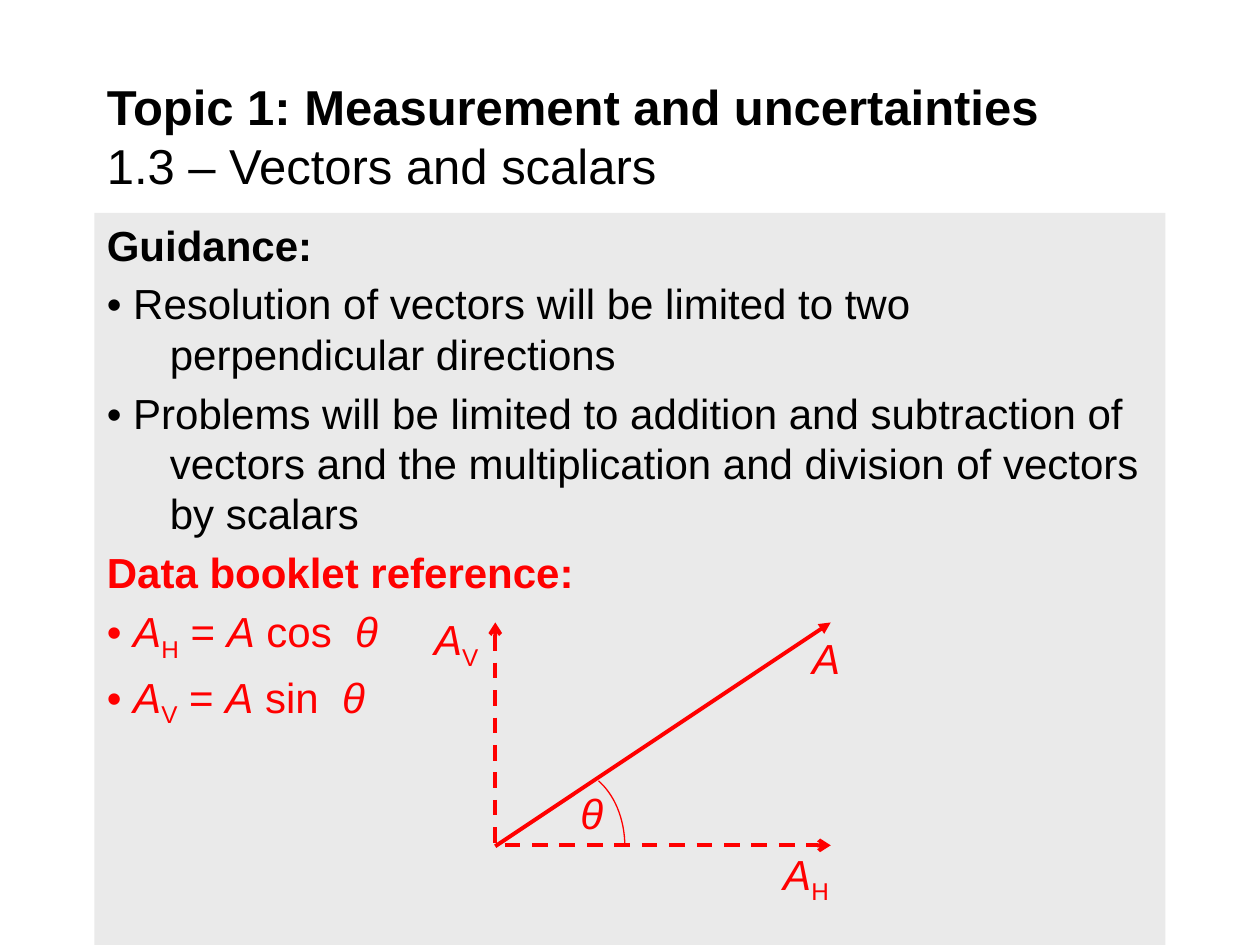
from pptx import Presentation
from pptx.dml.color import RGBColor
from pptx.enum.dml import MSO_LINE_DASH_STYLE as Dash
from pptx.enum.shapes import MSO_CONNECTOR as Link, MSO_SHAPE as Shape
from pptx.enum.text import MSO_ANCHOR as Anchor, MSO_AUTO_SIZE as Fit, PP_ALIGN as Align
from pptx.oxml.ns import qn
from pptx.util import Pt
from lxml.etree import SubElement

BLACK, RED, PANEL = "000000", "FF0000", "EAEAEA"


def colour(value):
    return RGBColor.from_string(value)


def add_span(para, text, style="", tint=BLACK, size=24):
    span = para.add_run()
    span.text = text
    font = span.font
    font.name, font.size = "Arial", Pt(size)
    font.bold, font.italic = style == "bold", style == "italic"
    font.color.rgb = colour(tint)
    if style == "sub":
        font._element.set("baseline", "-25000")


def add_text(shapes, box, wrap=True):
    frame = shapes.add_textbox(*map(Pt, box)).text_frame
    frame.word_wrap = wrap
    return frame


def style_line(shape, width, **ends):
    shape.line.color.rgb = colour(RED)
    shape.line.width = Pt(width)
    for end, kind in ends.items():
        SubElement(shape.line._get_or_add_ln(), qn(f"a:{end}End"), type=kind)


def add_title(page, box):
    frame = add_text(page.shapes, box)
    frame.vertical_anchor = Anchor.MIDDLE
    para = frame.paragraphs[0]
    add_span(para, "Topic 1: Measurement and uncertainties", "bold", size=28)
    para.add_line_break()
    add_span(para, "1.3 – Vectors and scalars", size=28)


def equation(part, function):
    return [("• ", ""), ("A", "italic"), (part, "sub"), (" = ", ""),
            ("A", "italic"), (f" {function}  ", ""), ("θ", "italic")]


def add_guidance(page, box):
    panel = page.shapes.add_shape(Shape.RECTANGLE, *map(Pt, box))
    panel.shadow.inherit = False
    panel.fill.solid()
    panel.fill.fore_color.rgb = colour(PANEL)
    panel.line.fill.background()
    frame = panel.text_frame
    frame.word_wrap = True
    frame.vertical_anchor = Anchor.TOP
    rows = [
        (BLACK, [("Guidance:", "bold")]),
        (BLACK, [("• Resolution of vectors will be limited to two perpendicular directions", "")]),
        (BLACK, [("• Problems will be limited to addition and subtraction of vectors "
                  "and the multiplication and division of vectors by scalars", "")]),
        (RED, [("Data booklet reference:", "bold")]),
        (RED, equation("H", "cos")),
        (RED, equation("V", "sin")),
    ]
    for index, (tint, spans) in enumerate(rows):
        para = frame.add_paragraph() if index else frame.paragraphs[0]
        para.alignment = Align.LEFT
        para.space_before = Pt(4.8)
        props = para._p.get_or_add_pPr()
        props.set("marL", str(Pt(36)))
        props.set("indent", str(-Pt(36)))
        for text, style in spans:
            add_span(para, text, style, tint)


def add_diagram(page, box):
    left, top, width, height = box
    right, bottom = left + width, top + height
    shapes = page.shapes.add_group_shape().shapes

    builder = shapes.build_freeform(Pt(left), Pt(top))
    builder.add_line_segments([(Pt(left), Pt(bottom)), (Pt(right), Pt(bottom))], close=False)
    axes = builder.convert_to_shape()
    axes.shadow.inherit = False
    axes.fill.background()
    axes.line.dash_style = Dash.DASH
    style_line(axes, 2.25, head="arrow", tail="arrow")

    vector = shapes.add_connector(Link.STRAIGHT, Pt(left), Pt(bottom + 0.5), Pt(right), Pt(top))
    SubElement(vector._element.spPr, qn("a:effectLst"))
    style_line(vector, 2.25, tail="triangle")

    labels = [
        ("A", "V", -42, -8.6, 41),
        ("A", "", 174, 2.2, 30),
        ("A", "H", 157.5, 125.5, 42),
        ("θ", "", 41.5, 91, 34),
    ]
    for symbol, part, x, y, label_width in labels:
        frame = add_text(shapes, (left + x, top + y, label_width, 36), wrap=False)
        frame.auto_size = Fit.SHAPE_TO_FIT_TEXT
        para = frame.paragraphs[0]
        add_span(para, symbol, "italic", RED)
        if part:
            add_span(para, part, "sub", RED)

    radius_x, radius_y = 33.1, 44.6
    centre_x, centre_y = left + 41, bottom + 0.5
    arc = shapes.add_shape(Shape.ARC, Pt(centre_x - radius_x), Pt(centre_y - radius_y),
                           Pt(2 * radius_x), Pt(2 * radius_y))
    arc.adjustments[0] = 295.7 * 0.6
    arc.adjustments[1] = 0
    arc.shadow.inherit = False
    arc.fill.background()
    style_line(arc, 0.75)


def main():
    deck = Presentation()
    deck.slide_width, deck.slide_height = Pt(720), Pt(540)
    page = deck.slides.add_slide(deck.slide_layouts[6])
    add_guidance(page, (54, 121.7, 612, 418.3))
    add_title(page, (54, 42, 612, 70.5))
    add_diagram(page, (283, 355.7, 191.7, 127.4))
    deck.save("out.pptx")


if __name__ == "__main__":
    main()
